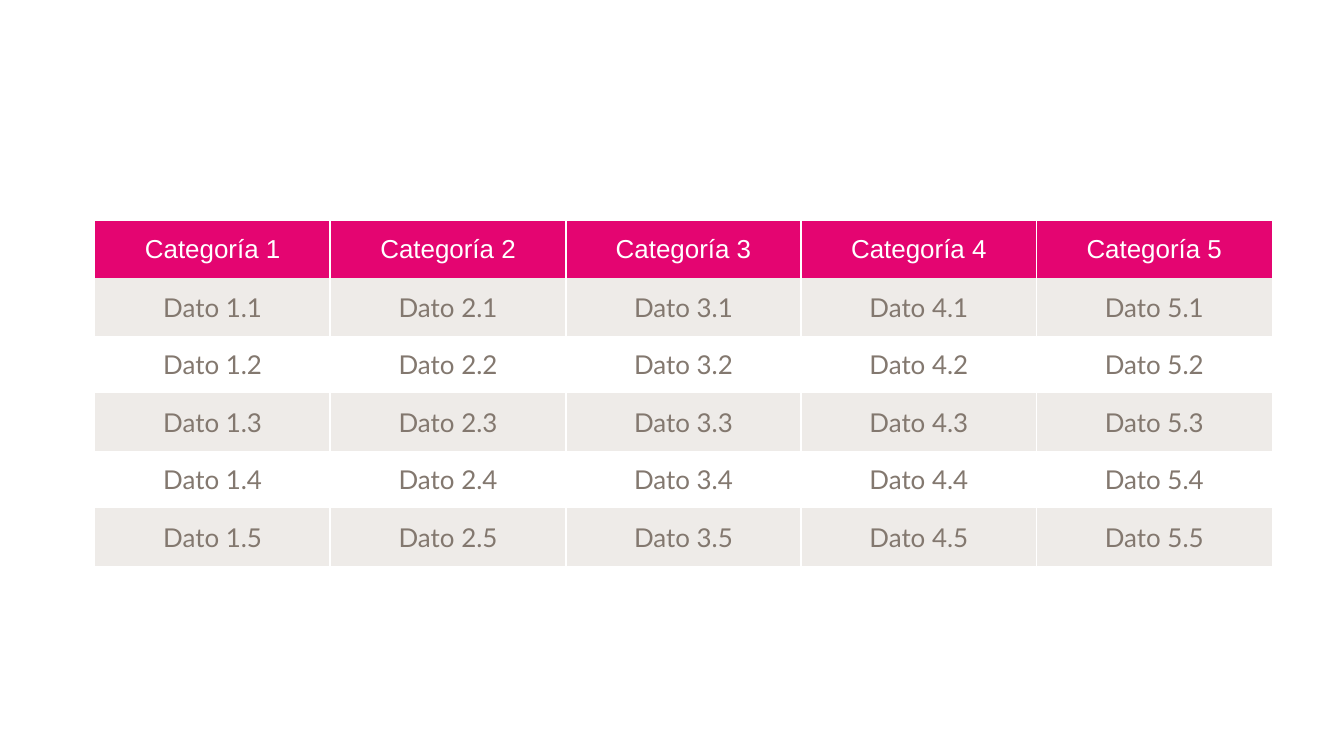
from dataclasses import dataclass

from lxml import etree
from pptx import Presentation
from pptx import util as u
from pptx.dml import color
from pptx.enum import text
from pptx.oxml import ns


@dataclass(frozen=True)
class Theme:
    header_fill: str = "E40571"
    band_fill: str = "EEEBE8"
    plain_fill: str = "FFFFFF"
    rule: str = "FFFFFF"
    header_text: str = "FFFFFF"
    body_text: str = "83786F"
    header_font: str = "Arial"
    body_font: str = "Lato"
    size: u.Pt = u.Pt(36)
    rule_width: u.Pt = u.Pt(3)


THEME = Theme()
COLUMNS, DATA_ROWS = 5, 5


def set_borders(cell, ruled_sides):
    """Rule the given sides of a cell and clear the others."""
    tc_pr = cell._tc.get_or_add_tcPr()
    for i, side in enumerate("LRTB"):
        ln = etree.Element(ns.qn(f"a:ln{side}"))
        if side in ruled_sides:
            ln.set("w", str(THEME.rule_width))
            fill = etree.SubElement(ln, ns.qn("a:solidFill"))
            etree.SubElement(fill, ns.qn("a:srgbClr"), val=THEME.rule)
        else:
            ln.set("w", "0")
            etree.SubElement(ln, ns.qn("a:noFill"))
        tc_pr.insert(i, ln)


def write_cell(cell, words, fill, font, ink):
    cell.fill.solid()
    cell.fill.fore_color.rgb = color.RGBColor.from_string(fill)
    cell.vertical_anchor = text.MSO_ANCHOR.MIDDLE
    cell.margin_left = cell.margin_right = u.Cm(0.3)
    cell.margin_top = cell.margin_bottom = u.Cm(0.15)
    p = cell.text_frame.paragraphs[0]
    p.alignment = text.PP_ALIGN.CENTER
    r = p.add_run()
    r.text = words
    r.font.name = font
    r.font.size = THEME.size
    r.font.bold = False
    r.font.color.rgb = color.RGBColor.from_string(ink)


def add_data_table(s, left, top, width, height):
    rows = DATA_ROWS + 1
    table = s.shapes.add_table(rows, COLUMNS, left, top, width, height).table
    table.horz_banding = False
    for column in table.columns:
        column.width = width // COLUMNS
    for row in table.rows:
        row.height = height // rows

    for row in range(rows):
        banded = row % 2 == 1
        for col in range(COLUMNS):
            cell = table.cell(row, col)
            # Header row, then alternating data rows
            if row == 0:
                write_cell(cell, f"Categoría {col + 1}", THEME.header_fill,
                           THEME.header_font, THEME.header_text)
            else:
                fill = THEME.band_fill if banded else THEME.plain_fill
                write_cell(cell, f"Dato {col + 1}.{row}", fill,
                           THEME.body_font, THEME.body_text)
            # Vertical rules between the coloured cells only
            sides = ""
            if row == 0 or banded:
                sides = ("L" if col > 0 else "") + ("R" if col < COLUMNS - 1 else "")
            set_borders(cell, sides)


def main():
    prs = Presentation()
    prs.slide_width, prs.slide_height = u.Cm(65.84), u.Cm(37.03)
    s = prs.slides.add_slide(prs.slide_layouts[6])
    add_data_table(s, u.Cm(4.65), u.Cm(10.82), u.Cm(57.66), u.Cm(16.89))
    prs.save("out.pptx")


if __name__ == "__main__":
    main()
